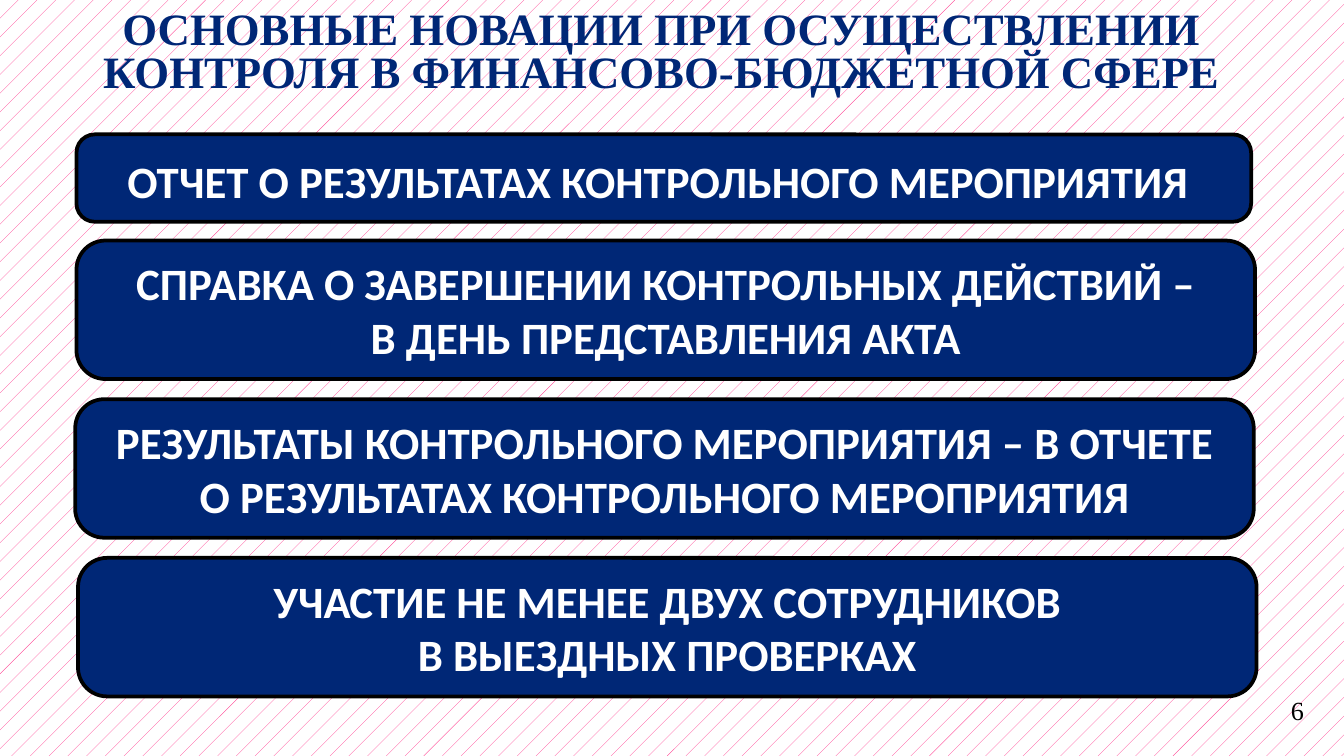
from pptx import Presentation
from pptx import util as u
from pptx.dml.color import RGBColor
from pptx.enum import dml, shapes, text

NAVY, BLACK, WHITE, PINK = "002776", "000000", "FFFFFF", "FF388C"
INNOVATIONS = [
    (41, 72, 629.3, 46.8, "ОТЧЕТ О РЕЗУЛЬТАТАХ КОНТРОЛЬНОГО МЕРОПРИЯТИЯ"),
    (41, 128.9, 631.4, 74.2,
     "СПРАВКА О ЗАВЕРШЕНИИ КОНТРОЛЬНЫХ ДЕЙСТВИЙ –\nВ ДЕНЬ ПРЕДСТАВЛЕНИЯ АКТА"),
    (40.3, 213.9, 631.4, 74.2,
     "РЕЗУЛЬТАТЫ КОНТРОЛЬНОГО МЕРОПРИЯТИЯ – В ОТЧЕТЕ "
     "О РЕЗУЛЬТАТАХ КОНТРОЛЬНОГО МЕРОПРИЯТИЯ"),
    (41.8, 298.9, 631.4, 74.2,
     "УЧАСТИЕ НЕ МЕНЕЕ ДВУХ СОТРУДНИКОВ\nВ ВЫЕЗДНЫХ ПРОВЕРКАХ"),
]


def color(value):
    """Turn a hex string into a colour."""
    return RGBColor.from_string(value)


def set_background(page):
    """Give the page its pink pattern on white."""
    fill = page.background.fill
    fill.patterned()
    fill.pattern = dml.MSO_PATTERN.PERCENT_5
    fill.fore_color.rgb = color(PINK)
    fill.back_color.rgb = color(WHITE)


def write(box, lines, size, name, ink, bold, align, anchor, spacing=None):
    """Write one paragraph per line into a box."""
    frame = box.text_frame
    frame.word_wrap = True
    frame.vertical_anchor = anchor
    for index, line in enumerate(lines):
        para = frame.add_paragraph() if index else frame.paragraphs[0]
        para.text = line
        para.alignment = align
        para.line_spacing = spacing
        para.font.size = u.Pt(size)
        para.font.name = name
        para.font.bold = bold
        para.font.color.rgb = color(ink)


def add_text(page, place, lines, size, ink, bold, align, anchor, spacing=None):
    """Add a serif text box."""
    box = page.shapes.add_textbox(*map(u.Pt, place))
    write(box, lines, size, "Times New Roman", ink, bold, align, anchor, spacing)


def add_panel(page, place, label):
    """Add a rounded navy panel with a centred label."""
    panel = page.shapes.add_shape(
        shapes.MSO_SHAPE.ROUNDED_RECTANGLE, *map(u.Pt, place))
    panel.adjustments[0] = 0.21
    panel.shadow.inherit = False
    panel.fill.solid()
    panel.fill.fore_color.rgb = color(NAVY)
    panel.line.color.rgb = color(BLACK)
    panel.line.width = u.Pt(2)
    write(panel, [label], 24, "Calibri", WHITE, True,
          text.PP_ALIGN.CENTER, text.MSO_ANCHOR.MIDDLE)
    return panel


def main():
    """Build and save the slide."""
    deck = Presentation()
    deck.slide_width, deck.slide_height = u.Pt(720), u.Pt(405)
    page = deck.slides.add_slide(deck.slide_layouts[6])
    set_background(page)
    add_text(page, (671.8, 368.6, 33.8, 28), ["6"], 14, BLACK, False,
             text.PP_ALIGN.RIGHT, text.MSO_ANCHOR.TOP)
    add_text(page, (42.5, 0, 623.5, 57.6),
             ["ОСНОВНЫЕ НОВАЦИИ ПРИ ОСУЩЕСТВЛЕНИИ",
              "КОНТРОЛЯ В ФИНАНСОВО-БЮДЖЕТНОЙ СФЕРЕ"],
             24, NAVY, True, text.PP_ALIGN.CENTER, text.MSO_ANCHOR.MIDDLE, 0.8)
    panels = [add_panel(page, place, label) for *place, label in INNOVATIONS]
    span = panels[0].text_frame.paragraphs[0].add_run()
    span.text = " "
    span.font.size = u.Pt(28)
    deck.save("out.pptx")


if __name__ == "__main__":
    main()
